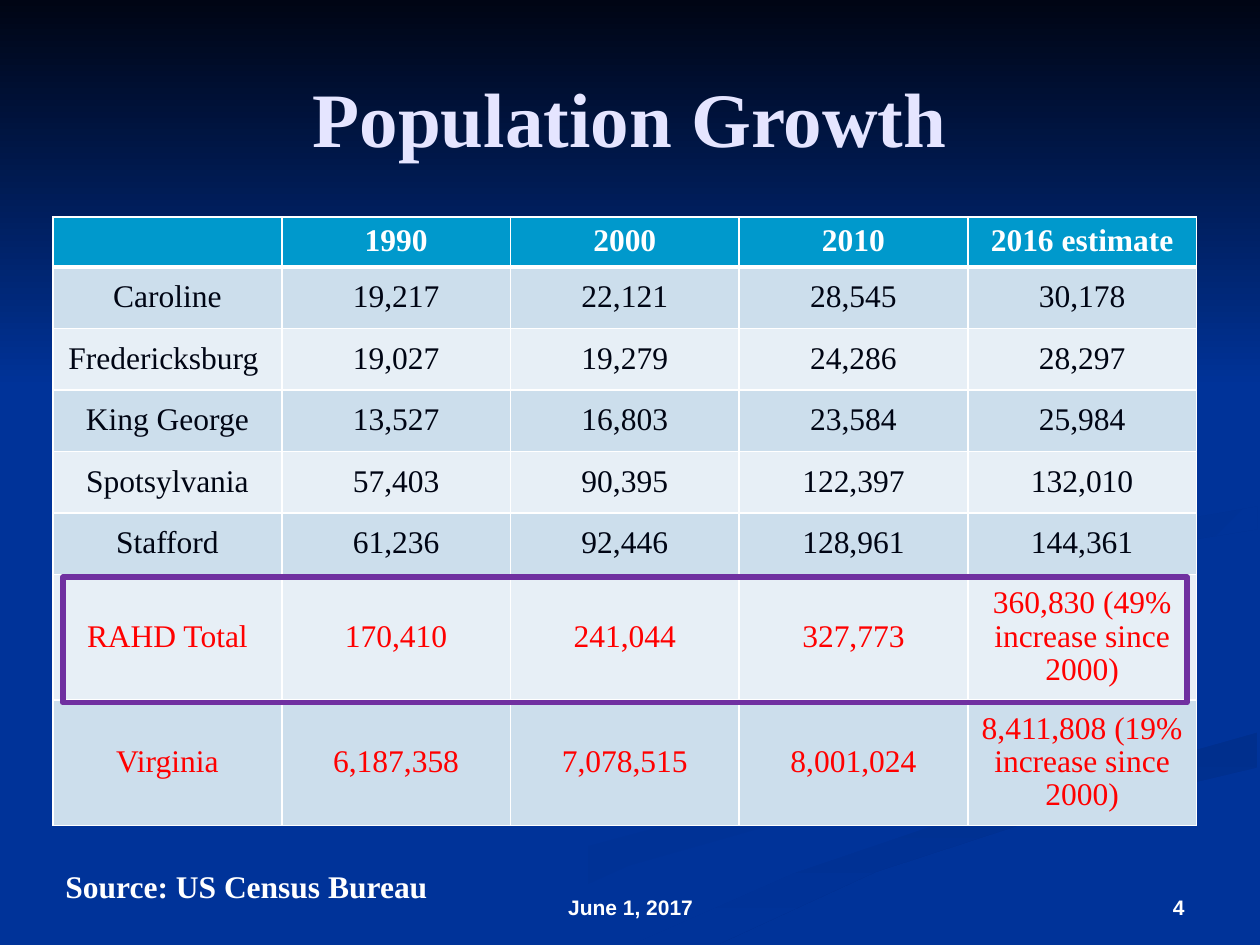
from lxml import etree
from pptx import Presentation
from pptx.dml.color import RGBColor
from pptx.enum import shapes, text
from pptx.oxml.ns import qn
from pptx.util import Cm, Pt

NAVY = RGBColor.from_string("003399")
NIGHT = RGBColor.from_string("000514")
SHADE = RGBColor.from_string("002F8D")
SOFT_SHADE = RGBColor.from_string("003193")
LAVENDER = RGBColor.from_string("E5E5FF")
WHITE = RGBColor.from_string("FFFFFF")
RED = RGBColor.from_string("FF0000")
PURPLE = RGBColor.from_string("7030A0")
HEADER_BLUE = RGBColor.from_string("0099CC")
BANDS = (RGBColor.from_string("CCDEEC"), RGBColor.from_string("E7EFF6"))

SERIF, SANS = "Times New Roman", "Arial"
MIDDLE, BOTTOM, TOP = text.MSO_ANCHOR.MIDDLE, text.MSO_ANCHOR.BOTTOM, text.MSO_ANCHOR.TOP
LEFT, CENTER, RIGHT = text.PP_ALIGN.LEFT, text.PP_ALIGN.CENTER, text.PP_ALIGN.RIGHT

POPULATION = [
    ("", "1990", "2000", "2010", "2016 estimate"),
    ("Caroline", "19,217", "22,121", "28,545", "30,178"),
    ("Fredericksburg ", "19,027", "19,279", "24,286", "28,297"),
    ("King George", "13,527", "16,803", "23,584", "25,984"),
    ("Spotsylvania", "57,403", "90,395", "122,397", "132,010"),
    ("Stafford", "61,236", "92,446", "128,961", "144,361"),
    ("RAHD Total", "170,410", "241,044", "327,773", "360,830 (49% increase since 2000)"),
    ("Virginia", "6,187,358", "7,078,515", "8,001,024", "8,411,808 (19% increase since 2000)"),
]
ROW_HEIGHTS = [1.01] + [1.24] * 5 + [2.53] * 2
COLUMN_WIDTH = 4.61
TOTALS_START = 6

FOOTER_TOP = 17.35
CAPTIONS = [
    ("4", 18.21, 5.92, 1.32, RIGHT, BOTTOM, {"size": Pt(12), "name": SANS}),
    ("June 1, 2017", 8.69, 8.05, 1.32, CENTER, BOTTOM, {"size": Pt(12), "name": SANS}),
    ("Source: US Census Bureau", 1.07, 8.26, 1.02, LEFT, TOP, {"size": Pt(18), "name": SERIF}),
]

WAVE_UNIT = Cm(0.0254)
WAVES = [
    (NAVY, SOFT_SHADE, 0, [
        (781, 553), (575, 459), (786, 566), (684, 613), (458, 674), (300, 749),
        (361, 749), (499, 687), (756, 614), (800, 581)]),
    (SHADE, NAVY, 90, [
        (503, 749), (571, 749), (695, 692), (821, 651), (998, 609), (998, 581),
        (764, 647), (630, 693)]),
    (NAVY, NAVY, 0, [
        (725, 464), (775, 503), (920, 547), (936, 587), (743, 643), (573, 703), (477, 749),
        (503, 749), (630, 693), (765, 647), (999, 581), (999, 538), (817, 492), (782, 460),
        (835, 430), (999, 402), (999, 387), (755, 432)]),
    (SOFT_SHADE, NAVY, 45, [
        (781, 460), (826, 496), (805, 476), (859, 443), (998, 420), (998, 402), (835, 430)]),
    (SHADE, NAVY, 45, [
        (683, 430), (855, 391), (894, 344), (864, 291), (762, 233), (870, 299), (882, 354),
        (763, 398), (597, 437), (577, 462), (622, 500), (593, 470)]),
    (NIGHT, NAVY, 90, [(0, 0), (0, 308), (1000, 308), (1000, 0)]),
]


def format_text(frame, content, alignment, anchor, color, font_values):
    frame.word_wrap = True
    frame.vertical_anchor = anchor
    paragraph = frame.paragraphs[0]
    paragraph.alignment = alignment
    run = paragraph.add_run()
    run.text = content
    run.font.color.rgb = color
    for key, value in font_values.items():
        setattr(run.font, key, value)
    return paragraph


def add_wave(slide, start, end, angle, points):
    builder = slide.shapes.build_freeform(*points[0], scale=WAVE_UNIT)
    builder.add_line_segments(points[1:], close=True)
    wave = builder.convert_to_shape()
    wave.shadow.inherit = False
    wave.line.fill.background()
    wave.fill.gradient()
    wave.fill.gradient_angle = -angle % 360
    for stop, color, position in zip(wave.fill.gradient_stops, (start, end), (0, 1)):
        stop.color.rgb = color
        stop.position = position


def set_borders(cell, widths):
    properties = cell._tc.get_or_add_tcPr()
    for index, (side, width) in enumerate(widths.items()):
        border = etree.Element(qn(f"a:ln{side}"), w=str(Pt(width)))
        fill = etree.SubElement(border, qn("a:solidFill"))
        etree.SubElement(fill, qn("a:srgbClr"), val=str(WHITE))
        properties.insert(index, border)


def add_population_table(slide):
    columns = len(POPULATION[0])
    table = slide.shapes.add_table(
        len(POPULATION), columns, Cm(1.07), Cm(4.37),
        Cm(COLUMN_WIDTH * columns), Cm(sum(ROW_HEIGHTS))).table
    for column in table.columns:
        column.width = Cm(COLUMN_WIDTH)
    for r, (entries, height) in enumerate(zip(POPULATION, ROW_HEIGHTS)):
        table.rows[r].height = Cm(height)
        header = r == 0
        ink = WHITE if header else RED if r >= TOTALS_START else NIGHT
        for c, entry in enumerate(entries):
            cell = table.cell(r, c)
            cell.fill.solid()
            cell.fill.fore_color.rgb = HEADER_BLUE if header else BANDS[(r - 1) % 2]
            set_borders(cell, {"L": 1, "R": 1, "T": 3 if r == 1 else 1, "B": 3 if header else 1})
            cell.vertical_anchor = MIDDLE
            paragraph = format_text(cell.text_frame, entry, CENTER, MIDDLE, ink, {
                "size": Pt(18), "name": SERIF, "bold": header})
            paragraph.line_spacing = 0.95


def main():
    deck = Presentation()
    deck.slide_width, deck.slide_height = Cm(25.4), Cm(19.05)
    slide = deck.slides.add_slide(deck.slide_layouts[5])
    slide.background.fill.solid()
    slide.background.fill.fore_color.rgb = NAVY

    for wave in WAVES:
        add_wave(slide, *wave)

    title = slide.shapes.title
    slide.shapes.element.append(title.element)
    title.left, title.top, title.width, title.height = Cm(1.27), Cm(0.76), Cm(22.86), Cm(3.18)
    format_text(title.text_frame, "Population Growth", CENTER, MIDDLE, LAVENDER, {
        "size": Pt(44), "name": SERIF, "bold": True})

    add_population_table(slide)

    for content, left, width, height, alignment, anchor, font_values in CAPTIONS:
        caption = slide.shapes.add_textbox(Cm(left), Cm(FOOTER_TOP), Cm(width), Cm(height))
        format_text(caption.text_frame, content, alignment, anchor, WHITE,
                    {**font_values, "bold": True})

    highlight = slide.shapes.add_shape(
        shapes.MSO_SHAPE.RECTANGLE, Cm(1.27), Cm(11.63), Cm(22.66), Cm(2.54))
    highlight.shadow.inherit = False
    highlight.fill.background()
    highlight.line.color.rgb = PURPLE
    highlight.line.width = Pt(3)

    deck.save("out.pptx")


if __name__ == "__main__":
    main()
